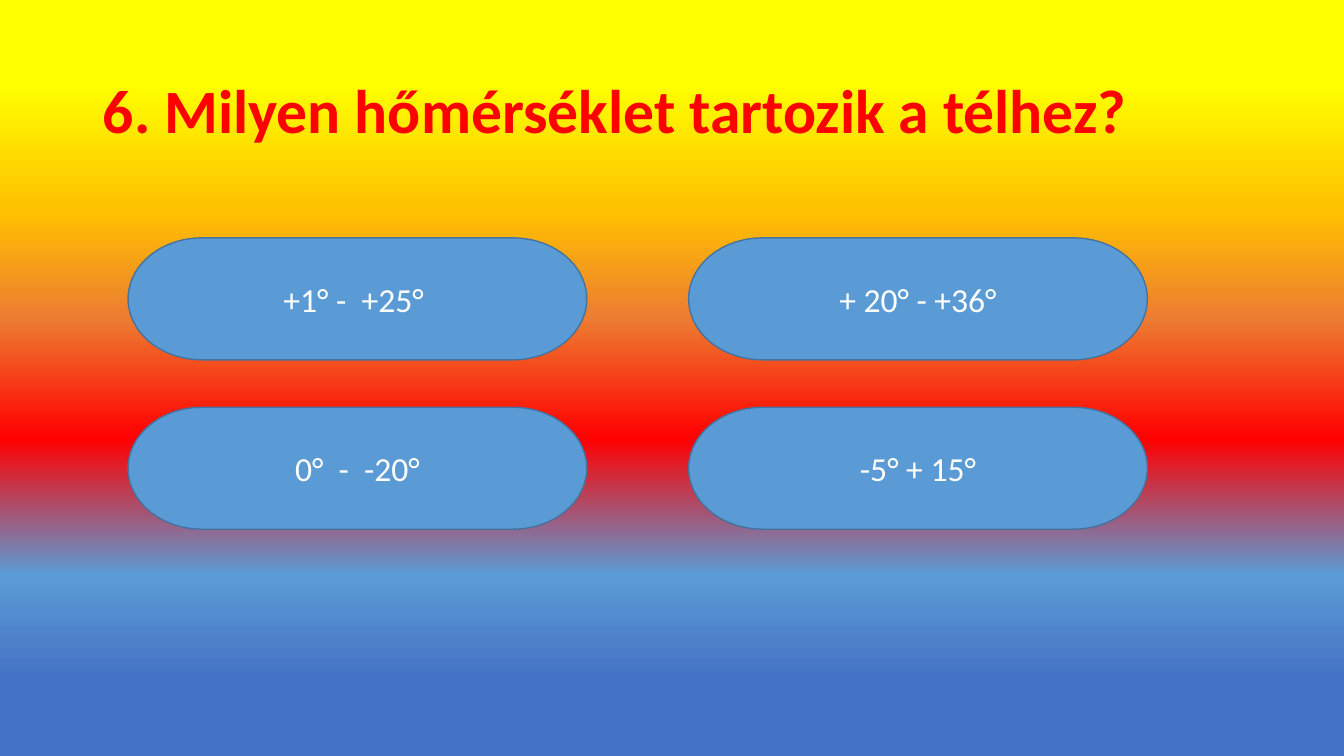
from dataclasses import dataclass

import lxml.etree
import pptx
import pptx.dml.color
import pptx.enum.shapes
import pptx.enum.text
import pptx.oxml.ns
import pptx.util

Inches = pptx.util.Inches
Pt = pptx.util.Pt
qn = pptx.oxml.ns.qn
RGB = pptx.dml.color.RGBColor.from_string


@dataclass(frozen=True)
class Theme:
    font: str = "Calibri"
    question_size: int = 44
    answer_size: int = 24
    question_color: str = "FF0000"
    answer_color: str = "FFFFFF"
    answer_fill: str = "5B9BD5"
    answer_line: str = "43739E"
    # Background stops from top to bottom: percent, colour
    sky: tuple = (
        (11, "FFFF00"),
        (28, "FFC000"),
        (42, "ED7D31"),
        (58, "FF0000"),
        (76, "5B9BD5"),
        (90, "4472C4"),
    )


theme = Theme()


def style_text(frame, size, color, alignment, bold=False):
    frame.word_wrap = True
    frame.vertical_anchor = pptx.enum.text.MSO_ANCHOR.MIDDLE
    paragraph = frame.paragraphs[0]
    paragraph.alignment = alignment
    font = paragraph.runs[0].font
    font.name = theme.font
    font.size = Pt(size)
    font.bold = bold
    font.color.rgb = RGB(color)
    return paragraph


presentation = pptx.Presentation()
presentation.slide_width = Inches(13.33)
presentation.slide_height = Inches(7.5)
slide = presentation.slides.add_slide(presentation.slide_layouts[5])

# Background gradient
sky = slide.background.fill
sky.gradient()
sky.gradient_angle = 270
stops = slide.element.find(".//" + qn("a:gsLst"))
for stop in list(stops):
    stops.remove(stop)
for percent, color in theme.sky:
    stop = lxml.etree.SubElement(stops, qn("a:gs"), pos=str(percent * 1000))
    lxml.etree.SubElement(stop, qn("a:srgbClr"), val=color)

# Question
question = slide.shapes.title
question.left, question.top = Inches(0.92), Inches(0.4)
question.width, question.height = Inches(11.5), Inches(1.45)
question.text_frame.text = "6. Milyen hőmérséklet tartozik a télhez?"
question.text_frame.auto_size = pptx.enum.text.MSO_AUTO_SIZE.NONE
question_line = style_text(question.text_frame, theme.question_size,
                           theme.question_color, pptx.enum.text.PP_ALIGN.LEFT, bold=True)
question_line.line_spacing = 0.9

# Answers in a two by two grid
answers = (
    ("+1° -  +25° ", "+ 20° - +36°"),
    ("0°  -  -20°", "-5° + 15°"),
)
for row, row_answers in enumerate(answers):
    for column, text in enumerate(row_answers):
        answer = slide.shapes.add_shape(
            pptx.enum.shapes.MSO_SHAPE.FLOWCHART_TERMINATOR,
            Inches(1.27 + 5.56 * column), Inches(2.36 + 1.68 * row),
            Inches(4.55), Inches(1.21))
        answer.shadow.inherit = False
        answer.fill.solid()
        answer.fill.fore_color.rgb = RGB(theme.answer_fill)
        answer.line.color.rgb = RGB(theme.answer_line)
        answer.line.width = Pt(1)
        answer.text_frame.text = text
        style_text(answer.text_frame, theme.answer_size,
                   theme.answer_color, pptx.enum.text.PP_ALIGN.CENTER)

presentation.save("out.pptx")
